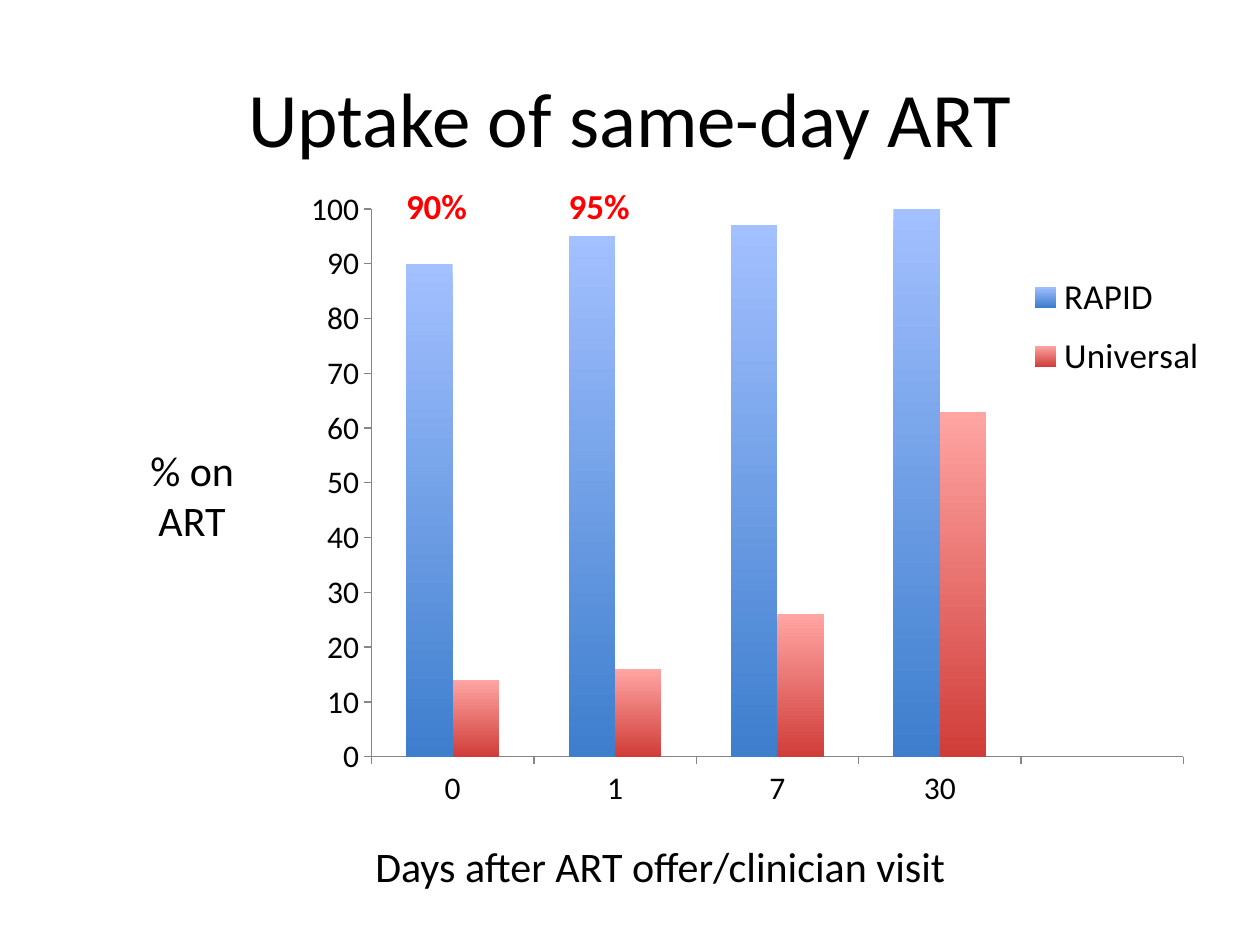
import pptx
import pptx.util
import pptx.chart.data
import pptx.dml.color
import pptx.enum.chart
import pptx.enum.text
import pptx.oxml
import pptx.oxml.ns

Inches = pptx.util.Inches
Pt = pptx.util.Pt
RGBColor = pptx.dml.color.RGBColor

FONT = "Calibri"
BLACK = RGBColor(0x00, 0x00, 0x00)
RED = RGBColor(0xFF, 0x00, 0x00)
AXIS_GRAY = RGBColor(0x86, 0x86, 0x86)
BLUE_TOP = RGBColor(0xA3, 0xC0, 0xFF)
BLUE_BOTTOM = RGBColor(0x3D, 0x7E, 0xCD)
RED_TOP = RGBColor(0xFF, 0xA5, 0xA3)
RED_BOTTOM = RGBColor(0xD0, 0x3D, 0x39)

TEXTS = [
    ("Uptake of same-day ART", (0.5, 0.3, 9, 1.25), 44, BLACK, False),
    ("Days after ART offer/clinician visit", (2.73, 6.62, 5.02, 0.5), 24, BLACK, False),
    ("% on ART", (0.81, 3.47, 1.43, 0.91), 24, BLACK, False),
    ("90%", (3.06, 1.41, 0.81, 0.44), 20, RED, True),
    ("95%", (4.35, 1.41, 0.81, 0.44), 20, RED, True),
]
CATEGORIES = ["0", "1", "7", "30", ""]
SERIES = [
    ("RAPID", [90, 95, 97, 100, None], BLUE_TOP, BLUE_BOTTOM),
    ("Universal", [14, 16, 26, 63, None], RED_TOP, RED_BOTTOM),
]
CHART_BOX = (2.24, 1.45, 7.53, 5.08)
PLOT_LAYOUT = (0.094, 0.041, 0.856, 0.856)
LEGEND_LAYOUT = (0.76, 0.12, 0.24, 0.21)


def style_font(font, size, color=BLACK, bold=False):
    font.name = FONT
    font.size = Pt(size)
    font.bold = bold
    font.color.rgb = color


def add_text(slide, text, box, size, color, bold):
    shape = slide.shapes.add_textbox(*map(Inches, box))
    frame = shape.text_frame
    frame.word_wrap = True
    frame.vertical_anchor = pptx.enum.text.MSO_ANCHOR.MIDDLE
    paragraph = frame.paragraphs[0]
    paragraph.text = text
    paragraph.alignment = pptx.enum.text.PP_ALIGN.CENTER
    style_font(paragraph.font, size, color, bold)


def make_layout(box, inner=False):
    target = '<c:layoutTarget val="inner"/>' if inner else ""
    modes = "".join(f'<c:{name}Mode val="edge"/>' for name in "xy")
    sizes = "".join(f'<c:{name} val="{value}"/>' for name, value in zip("xywh", box))
    return pptx.oxml.parse_xml(
        f'<c:layout {pptx.oxml.ns.nsdecls("c")}><c:manualLayout>'
        f"{target}{modes}{sizes}</c:manualLayout></c:layout>"
    )


def add_chart(slide):
    data = pptx.chart.data.CategoryChartData(number_format="0")
    data.categories = CATEGORIES
    for name, values, *_ in SERIES:
        data.add_series(name, values)
    kind = pptx.enum.chart.XL_CHART_TYPE.COLUMN_CLUSTERED
    chart = slide.shapes.add_chart(kind, *map(Inches, CHART_BOX), data).chart
    chart.has_title = False
    style_font(chart.font, 10)

    plot = chart.plots[0]
    plot.gap_width = 150
    plot.overlap = 0
    plot.vary_by_categories = False
    for series, (_, _, top, bottom) in zip(plot.series, SERIES):
        fill = series.format.fill
        fill.gradient()
        fill.gradient_angle = 270
        for stop, color, position in zip(fill.gradient_stops, (top, bottom), (0, 1)):
            stop.color.rgb = color
            stop.position = position

    for axis in (chart.category_axis, chart.value_axis):
        axis.has_major_gridlines = False
        axis.major_tick_mark = pptx.enum.chart.XL_TICK_MARK.OUTSIDE
        axis.format.line.color.rgb = AXIS_GRAY
        axis.format.line.width = Pt(0.75)
        style_font(axis.tick_labels.font, 18)
    chart.value_axis.minimum_scale = 0
    chart.value_axis.maximum_scale = 100
    chart.value_axis.major_unit = 10
    chart.value_axis.tick_labels.number_format = "0"
    chart.value_axis.tick_labels.number_format_is_linked = False

    chart.has_legend = True
    legend = chart.legend
    legend.position = pptx.enum.chart.XL_LEGEND_POSITION.RIGHT
    legend.include_in_layout = False
    style_font(legend.font, 20)

    qn = pptx.oxml.ns.qn
    plot_area = chart.element.find(".//" + qn("c:plotArea"))
    legend_element = chart.element.find(".//" + qn("c:legend"))
    for parent in (plot_area, legend_element):
        for layout in parent.findall(qn("c:layout")):
            parent.remove(layout)
    plot_area.insert(0, make_layout(PLOT_LAYOUT, inner=True))
    legend_element.find(qn("c:legendPos")).addnext(make_layout(LEGEND_LAYOUT))


def main():
    presentation = pptx.Presentation()
    presentation.slide_width = Inches(10)
    presentation.slide_height = Inches(7.5)
    slide = presentation.slides.add_slide(presentation.slide_layouts[6])
    for item in TEXTS:
        add_text(slide, *item)
    add_chart(slide)
    presentation.save("out.pptx")


if __name__ == "__main__":
    main()
